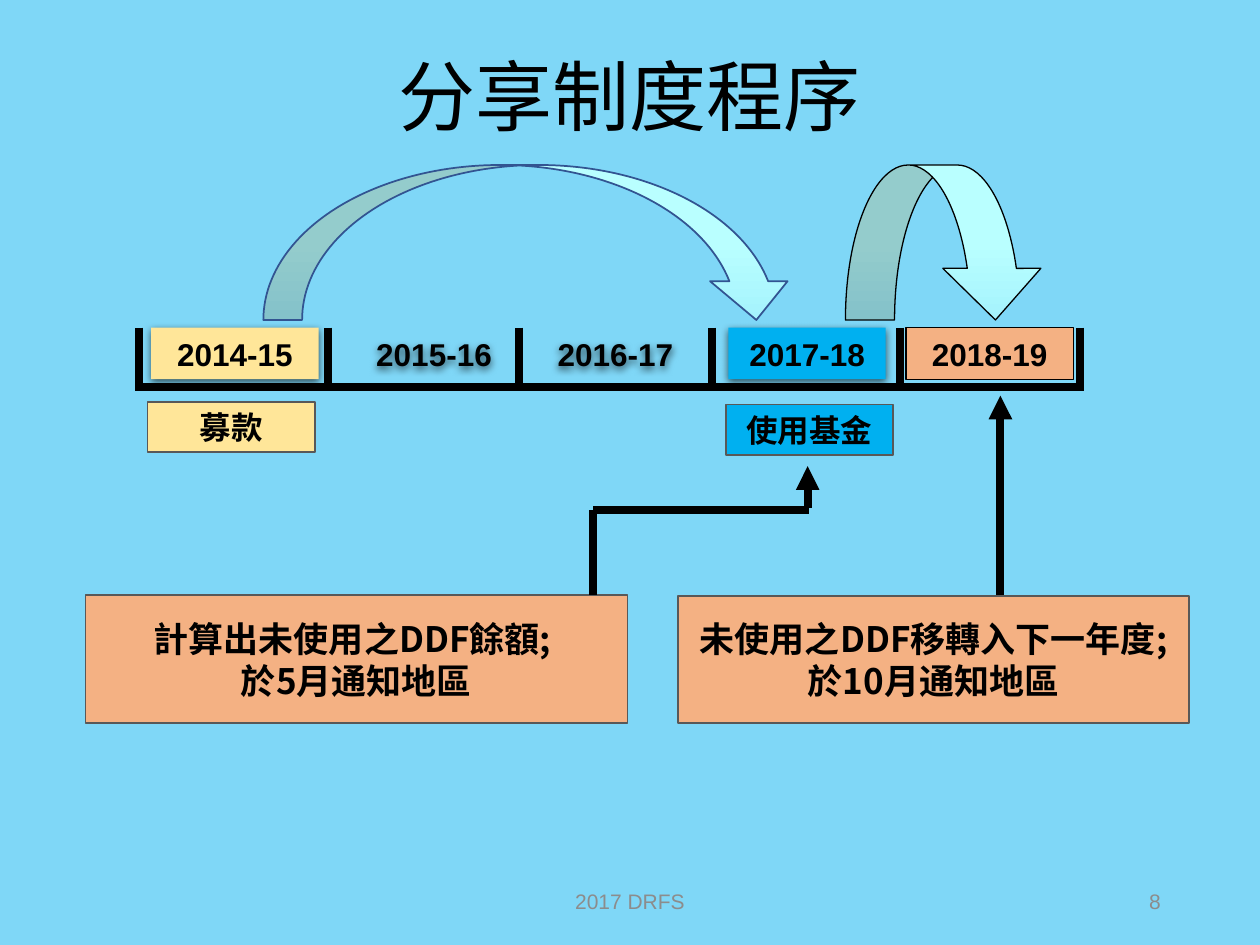
import itertools
from dataclasses import dataclass

import pptx
import pptx.dml.color
import pptx.enum.dml
import pptx.enum.shapes
import pptx.enum.text
import pptx.oxml
import pptx.oxml.ns
import pptx.util

Inches = pptx.util.Inches
Pt = pptx.util.Pt
SHAPE = pptx.enum.shapes.MSO_SHAPE
ALIGN = pptx.enum.text.PP_ALIGN
ANCHOR = pptx.enum.text.MSO_ANCHOR


@dataclass(frozen=True)
class Theme:
    background: str = "7FD7F7"
    ink: str = "000000"
    muted: str = "8C8C8C"
    border: str = "585858"
    arc_border: str = "325491"
    arc_light: str = "B9FFFF"
    arc_dark: str = "A5F3FD"
    orange: str = "F4B183"
    yellow: str = "FFE699"
    blue: str = "00B0F0"
    latin: str = "Arial"
    cjk: str = "Noto Sans CJK SC"
    title: int = 44
    note: int = 20
    label: int = 18
    footer: int = 12
    rule: float = 4.5


def rgb(value):
    return pptx.dml.color.RGBColor.from_string(value)


def add_xml(parent, xml):
    """Append a fragment, with NS standing for the drawing namespace."""
    ns = pptx.oxml.ns.nsdecls("a")
    parent.append(pptx.oxml.parse_xml(xml.replace(" NS", " " + ns, 1)))


class SlideBuilder:
    def __init__(self, slide, theme):
        self.slide = slide
        self.theme = theme
        fill = slide.background.fill
        fill.solid()
        fill.fore_color.rgb = rgb(theme.background)

    def set_text(self, s, text, size, font=None, color=None, bold=True,
                 align=ALIGN.CENTER, anchor=ANCHOR.MIDDLE, spacing=None):
        tf = s.text_frame
        tf.word_wrap = True
        tf.vertical_anchor = anchor
        tf.text = text
        for p in tf.paragraphs:
            p.alignment = align
            p.line_spacing = spacing
            for r in p.runs:
                r.font.size = Pt(size)
                r.font.bold = bold
                r.font.name = font or self.theme.latin
                r.font.color.rgb = rgb(color or self.theme.ink)
                add_xml(r.font._element, f'<a:ea NS typeface="{self.theme.cjk}"/>')

    def outline(self, s, color, width):
        if color:
            s.line.color.rgb = rgb(color)
            s.line.width = Pt(width)
        else:
            s.line.fill.background()

    def text(self, box, text, size, **style):
        s = self.slide.shapes.add_textbox(*map(Inches, box))
        self.set_text(s, text, size, **style)

    def box(self, box, text, size, fill=None, border=None, width=1,
            shadow=False, **style):
        s = self.slide.shapes.add_shape(SHAPE.RECTANGLE, *map(Inches, box))
        if fill:
            s.fill.solid()
            s.fill.fore_color.rgb = rgb(fill)
        else:
            s.fill.background()
        self.outline(s, border, width)
        s.shadow.inherit = False
        if shadow:
            effects = s._element.spPr.find(pptx.oxml.ns.qn("a:effectLst"))
            add_xml(effects, '<a:outerShdw NS blurRad="57150" dist="19050" '
                    'dir="5400000" algn="ctr" rotWithShape="0">'
                    '<a:srgbClr val="000000"><a:alpha val="63000"/></a:srgbClr>'
                    '</a:outerShdw>')
        self.set_text(s, text, size, **style)

    def line(self, start, end, arrow=False):
        s = self.slide.shapes.add_connector(
            pptx.enum.shapes.MSO_CONNECTOR.STRAIGHT, *map(Inches, start + end))
        self.outline(s, self.theme.ink, self.theme.rule)
        if arrow:
            ln = s._element.spPr.find(pptx.oxml.ns.qn("a:ln"))
            add_xml(ln, '<a:tailEnd NS type="triangle"/>')
        add_xml(s._element.spPr, "<a:effectLst NS/>")

    def arc(self, box, border, width, adjustments=()):
        s = self.slide.shapes.add_shape(SHAPE.CURVED_DOWN_ARROW, *map(Inches, box))
        for i, value in enumerate(adjustments):
            s.adjustments[i] = value
        s.fill.gradient()
        s.fill.gradient_angle = 270
        stops = s.fill.gradient_stops
        colors = (self.theme.arc_light, self.theme.arc_dark)
        for stop, position, color in zip(stops, (0.5, 1), colors):
            stop.position = position
            stop.color.rgb = rgb(color)
        self.outline(s, border, width)
        s.shadow.inherit = False


def main():
    theme = Theme()
    prs = pptx.Presentation()
    prs.slide_width, prs.slide_height = Inches(10), Inches(7.5)
    b = SlideBuilder(prs.slides.add_slide(prs.slide_layouts[6]), theme)

    b.text((0.69, 0.4, 8.62, 0.79), "分享制度程序", theme.title,
           font=theme.cjk, bold=False, spacing=0.9)

    # Timeline: a baseline between year marks
    marks = (1.1, 2.6, 4.12, 5.65, 7.14, 8.57)
    for left, right in itertools.pairwise(marks):
        b.line((left, 3.07), (right, 3.07))
    for x in marks:
        b.line((x, 2.6), (x, 3.1))

    years = (
        ("2014-15", 1.2, 1.33, theme.yellow, None),
        ("2015-16", 2.78, 1.33, None, None),
        ("2016-17", 4.22, 1.33, None, None),
        ("2017-18", 5.78, 1.25, theme.blue, None),
        ("2018-19", 7.19, 1.33, theme.orange, theme.ink),
    )
    for year, x, width, fill, border in years:
        b.box((x, 2.6, width, 0.41), year, theme.label, fill, border, 0.75,
              shadow=border is None, anchor=ANCHOR.BOTTOM)

    for label, x, y, fill in (("募款", 1.17, 3.19, theme.yellow),
                              ("使用基金", 5.76, 3.21, theme.blue)):
        b.box((x, y, 1.33, 0.4), label, theme.label, fill, theme.border,
              anchor=ANCHOR.BOTTOM)

    b.arc((2.09, 1.31, 4.22, 1.23), theme.arc_border, 1)
    b.arc((6.71, 1.31, 1.58, 1.23), theme.ink, 0.75, (0.317, 0.633, 0.333))

    # Notes and the arrows up to their years
    notes = (
        ((0.68, 4.72, 4.3, 1.02), "計算出未使用之DDF餘額; \n於5月通知地區"),
        ((5.38, 4.73, 4.06, 1.01), "未使用之DDF移轉入下一年度; 於10月通知地區"),
    )
    for box, text in notes:
        b.box(box, text, theme.note, theme.orange, theme.border, font=theme.cjk)
    b.line((4.71, 4.72), (4.71, 4.05))
    b.line((4.71, 4.05), (6.42, 4.05))
    b.line((6.41, 4.03), (6.41, 3.7), arrow=True)
    b.line((7.94, 4.72), (7.94, 3.14), arrow=True)

    footer = dict(size=theme.footer, color=theme.muted, bold=False)
    b.text((3.31, 6.95, 3.38, 0.4), "2017 DRFS", **footer)
    b.text((7.06, 6.95, 2.25, 0.4), "8", align=ALIGN.RIGHT, **footer)
    prs.save("out.pptx")


if __name__ == "__main__":
    main()
